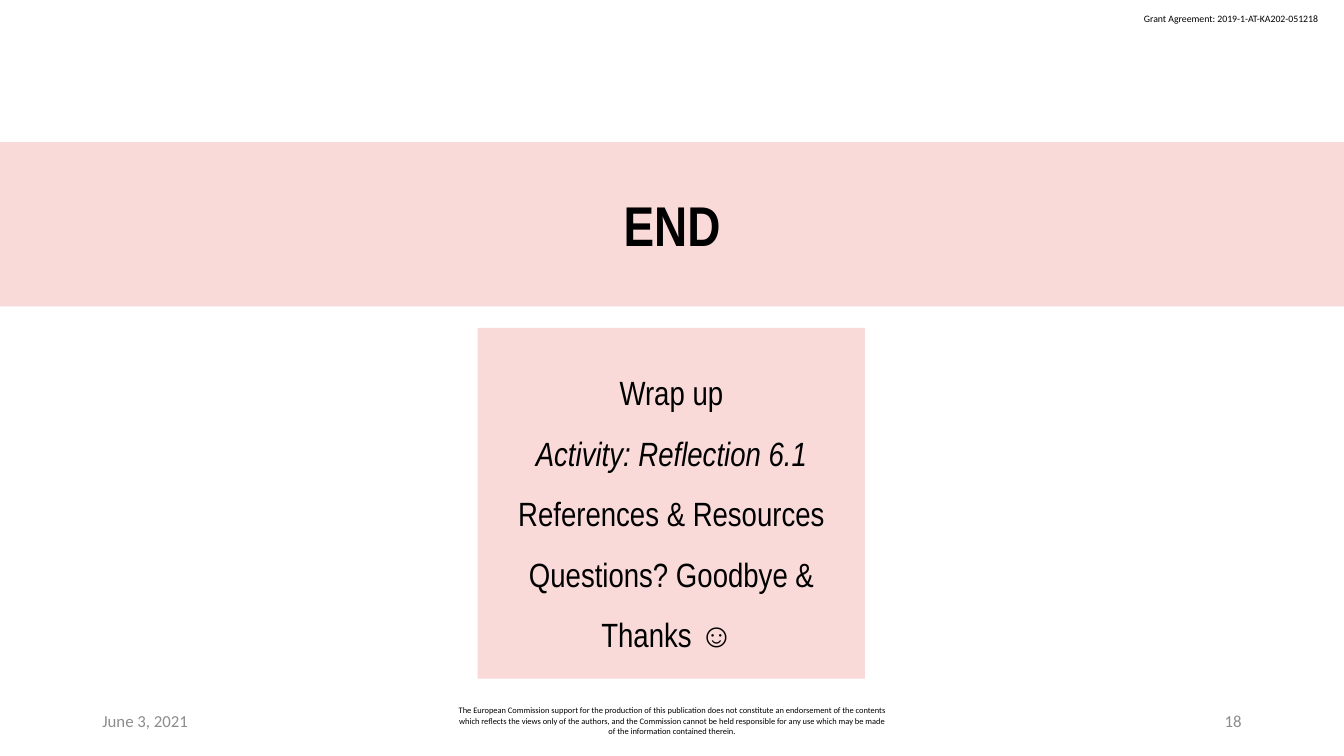
import pptx
import pptx.util
import pptx.dml.color
import pptx.enum.shapes
import pptx.enum.text

Cm = pptx.util.Cm
Pt = pptx.util.Pt
Align = pptx.enum.text.PP_ALIGN
Anchor = pptx.enum.text.MSO_ANCHOR

PINK = pptx.dml.color.RGBColor(0xF9, 0xDA, 0xD9)
BLACK = pptx.dml.color.RGBColor(0, 0, 0)
GREY = pptx.dml.color.RGBColor(0x8C, 0x8C, 0x8C)

SLIDE_WIDTH = Cm(33.87)
FOOTER_TOP = Cm(17.65)
FOOTER_HEIGHT = Cm(1.02)
DISCLAIMER = (
    "The European Commission support for the production of this publication "
    "does not constitute an endorsement of the contents which reflects the "
    "views only of the authors, and the Commission cannot be held responsible "
    "for any use which may be made of the information contained therein."
)
CLOSING_STEPS = [
    ("Wrap up", False),
    ("Activity: Reflection 6.1", True),
    ("References & Resources", False),
    ("Questions? Goodbye & Thanks ☺ ", False),
]


def add_run(paragraph, text, font_name, size, color, bold=False, italic=False):
    run = paragraph.add_run()
    run.text = text
    run.font.name = font_name
    run.font.size = Pt(size)
    run.font.color.rgb = color
    run.font.bold = bold
    run.font.italic = italic


def add_label(slide, box, text, size, color, alignment, anchor=Anchor.MIDDLE, wrap=True):
    frame = slide.shapes.add_textbox(*box).text_frame
    frame.word_wrap = wrap
    frame.vertical_anchor = anchor
    paragraph = frame.paragraphs[0]
    paragraph.alignment = alignment
    add_run(paragraph, text, "Calibri", size, color)


def add_panel(slide, box, lines, size, line_spacing):
    shape = slide.shapes.add_shape(pptx.enum.shapes.MSO_SHAPE.RECTANGLE, *box)
    shape.shadow.inherit = False
    shape.fill.solid()
    shape.fill.fore_color.rgb = PINK
    shape.line.fill.background()
    frame = shape.text_frame
    frame.word_wrap = True
    frame.vertical_anchor = Anchor.MIDDLE
    frame.margin_left = frame.margin_right = Cm(0.33)
    frame.margin_top = frame.margin_bottom = Cm(0.18)
    for index, (text, italic) in enumerate(lines):
        paragraph = frame.add_paragraph() if index else frame.paragraphs[0]
        paragraph.alignment = Align.CENTER
        paragraph.line_spacing = line_spacing
        add_run(paragraph, text, "Arial Narrow", size, BLACK, len(lines) == 1, italic)


def main():
    presentation = pptx.Presentation()
    presentation.slide_width = SLIDE_WIDTH
    presentation.slide_height = Cm(19.05)
    slide = presentation.slides.add_slide(presentation.slide_layouts[6])

    add_label(slide, (Cm(28.58), Cm(0.2), Cm(5), Cm(0.56)),
              "Grant Agreement: 2019-1-AT-KA202-051218", 7, BLACK,
              Align.LEFT, Anchor.TOP, False)
    for left, width, text, size, color, alignment in [
        (2.33, 7.62, "June 3, 2021", 12, GREY, Align.LEFT),
        (11.22, 11.43, DISCLAIMER, 6, BLACK, Align.CENTER),
        (23.92, 7.62, "18", 12, GREY, Align.RIGHT),
    ]:
        add_label(slide, (Cm(left), FOOTER_TOP, Cm(width), FOOTER_HEIGHT),
                  text, size, color, alignment)

    add_panel(slide, (0, Cm(3.58), SLIDE_WIDTH, Cm(4.14)), [("END", False)], 40, 1.0)
    add_panel(slide, (Cm(12.04), Cm(8.26), Cm(9.76), Cm(8.84)), CLOSING_STEPS, 24, 1.5)

    presentation.save("out.pptx")


if __name__ == "__main__":
    main()
